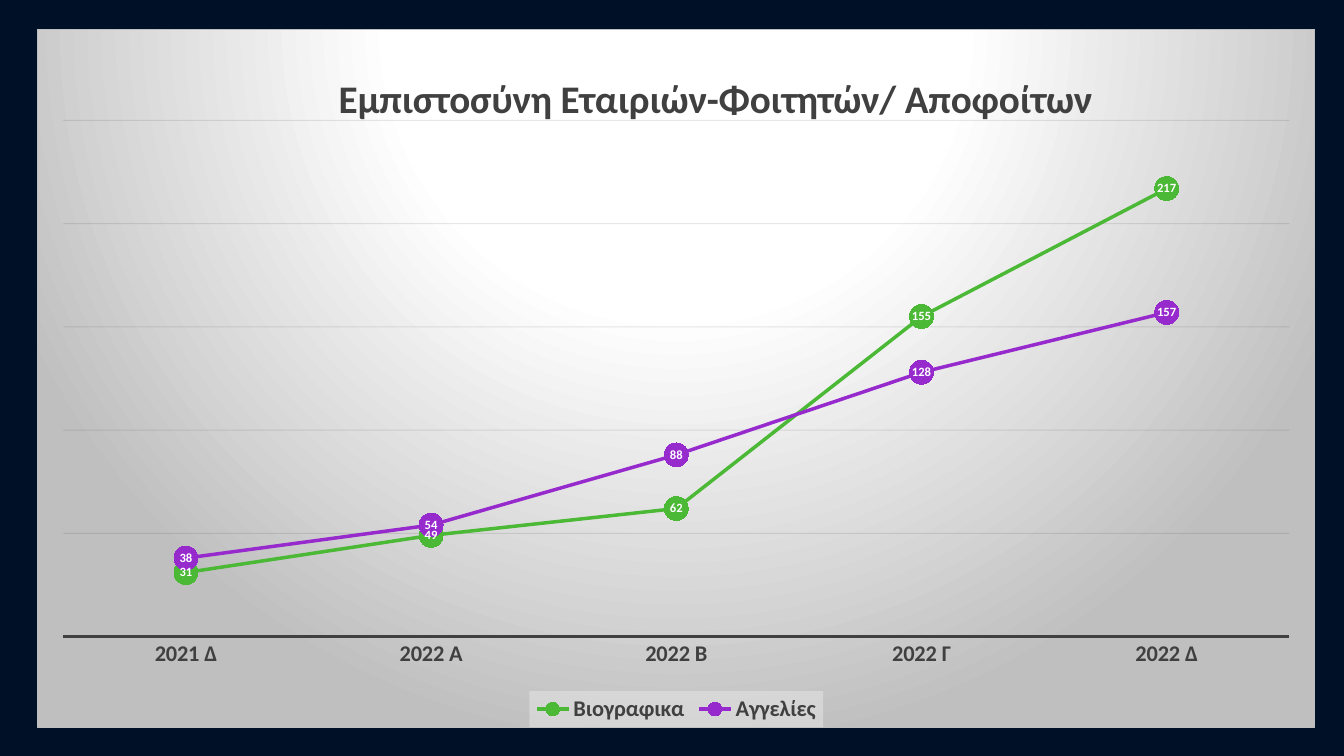
from lxml.etree import SubElement
from pptx import Presentation
from pptx.chart.data import CategoryChartData
from pptx.dml.color import RGBColor
from pptx.enum.chart import (XL_CHART_TYPE, XL_LABEL_POSITION, XL_LEGEND_POSITION,
                             XL_MARKER_STYLE, XL_TICK_MARK)
from pptx.oxml import parse_xml
from pptx.oxml.ns import nsdecls, qn
from pptx.util import Cm, Pt

TEXT = "404040"
QUARTERS = ["2021 Δ", "2022 Α", "2022 Β", "2022 Γ", "2022 Δ"]
SERIES = [("Βιογραφικα", [31, 49, 62, 155, 217], "4BB836"),
          ("Αγγελίες", [38, 54, 88, 128, 157], "972ACD")]

CHART_FILL = f"""<c:spPr {nsdecls('c', 'a')}><a:gradFill><a:gsLst>
<a:gs pos="0"><a:srgbClr val="FFFFFF"/></a:gs>
<a:gs pos="39000"><a:srgbClr val="FFFFFF"/></a:gs>
<a:gs pos="100000"><a:srgbClr val="BFBFBF"/></a:gs></a:gsLst>
<a:path path="circle"><a:fillToRect l="50000" t="-80000" r="50000" b="180000"/></a:path>
</a:gradFill><a:ln w="9525"><a:solidFill><a:srgbClr val="BFBFBF"/></a:solidFill></a:ln></c:spPr>"""
LEGEND_FILL = f"""<c:spPr {nsdecls('c', 'a')}><a:solidFill><a:srgbClr val="F2F2F2">
<a:alpha val="39000"/></a:srgbClr></a:solidFill></c:spPr>"""


def rgb(value):
    """Turn a hex string into a colour."""
    return RGBColor.from_string(value)


def set_font(font, size, color=TEXT, bold=True):
    """Style a chart font."""
    font.name, font.size, font.bold = "Calibri", Pt(size), bold
    font.color.rgb = rgb(color)


def set_line(line, color, width):
    """Give a line its colour and width in points."""
    line.color.rgb = rgb(color)
    line.width = Pt(width)


def set_layout(parent, index, **values):
    """Place a chart part by fractions of the chart area."""
    for old in parent.findall(qn("c:layout")):
        parent.remove(old)
    layout = parse_xml(f"<c:layout {nsdecls('c')}><c:manualLayout/></c:layout>")
    for name, value in values.items():
        SubElement(layout[0], qn(f"c:{name}")).set("val", str(value))
    parent.insert(index, layout)


def add_title(chart, text):
    """Add the chart title."""
    title = chart.chart_title
    p = title.text_frame.paragraphs[0]
    p.text = text
    set_font(p.font, 28)
    set_layout(title._element, 1, xMode="edge", yMode="edge", x=0.23, y=0.05)


def style_axes(chart):
    """Style the category axis and the gridlines."""
    cat = chart.category_axis
    cat.major_tick_mark = XL_TICK_MARK.NONE
    set_font(cat.tick_labels.font, 16)
    set_line(cat.format.line, TEXT, 1.5)
    val = chart.value_axis
    val.minimum_scale, val.maximum_scale, val.major_unit = 0, 250, 50
    val.visible = False
    set_line(val.major_gridlines.format.line, "0D0D0D", 0.75)
    grid = val._element.find(qn("c:majorGridlines"))
    SubElement(grid.find(".//" + qn("a:srgbClr")), qn("a:alpha")).set("val", "10000")


def style_series(series, color):
    """Style one line with its markers and value labels."""
    series.smooth = False
    set_line(series.format.line, color, 2.5)
    marker = series.marker
    marker.style, marker.size = XL_MARKER_STYLE.CIRCLE, 17
    marker.format.fill.solid()
    marker.format.fill.fore_color.rgb = rgb(color)
    marker.format.line.fill.background()
    labels = series.data_labels
    labels.show_value = True
    labels.position = XL_LABEL_POSITION.CENTER
    set_font(labels.font, 9, "FFFFFF")


def add_legend(chart):
    """Add the legend on its pale background."""
    chart.has_legend = True
    legend = chart.legend
    legend.position = XL_LEGEND_POSITION.BOTTOM
    legend.include_in_layout = False
    set_font(legend.font, 16)
    legend._element.find(qn("c:txPr")).addprevious(parse_xml(LEGEND_FILL))


def add_line_chart(s):
    """Add the line chart of CVs and job adverts."""
    data = CategoryChartData()
    data.categories = QUARTERS
    for name, values, _ in SERIES:
        data.add_series(name, values)
    chart = s.shapes.add_chart(XL_CHART_TYPE.LINE_MARKERS, Cm(0.94), Cm(0.74),
                               Cm(32.21), Cm(17.6), data).chart
    set_font(chart.font, 10, "FFFFFF", False)
    add_title(chart, "Εμπιστοσύνη Εταιριών-Φοιτητών/ Αποφοίτων")
    style_axes(chart)
    plot = chart.plots[0]
    plot.vary_by_categories = False
    for series, (_, _, color) in zip(plot.series, SERIES):
        style_series(series, color)
    add_legend(chart)
    body = chart._chartSpace.find(qn("c:chart"))
    body.addnext(parse_xml(CHART_FILL))
    set_layout(body.find(qn("c:plotArea")), 0, layoutTarget="inner", xMode="edge",
               yMode="edge", x=0.02, y=0.13, w=0.96, h=0.74)


def main():
    """Build the slide."""
    prs = Presentation()
    prs.slide_width, prs.slide_height = Cm(33.87), Cm(19.05)
    s = prs.slides.add_slide(prs.slide_layouts[6])
    s.background.fill.solid()
    s.background.fill.fore_color.rgb = rgb("001027")
    add_line_chart(s)
    prs.save("out.pptx")


if __name__ == "__main__":
    main()
